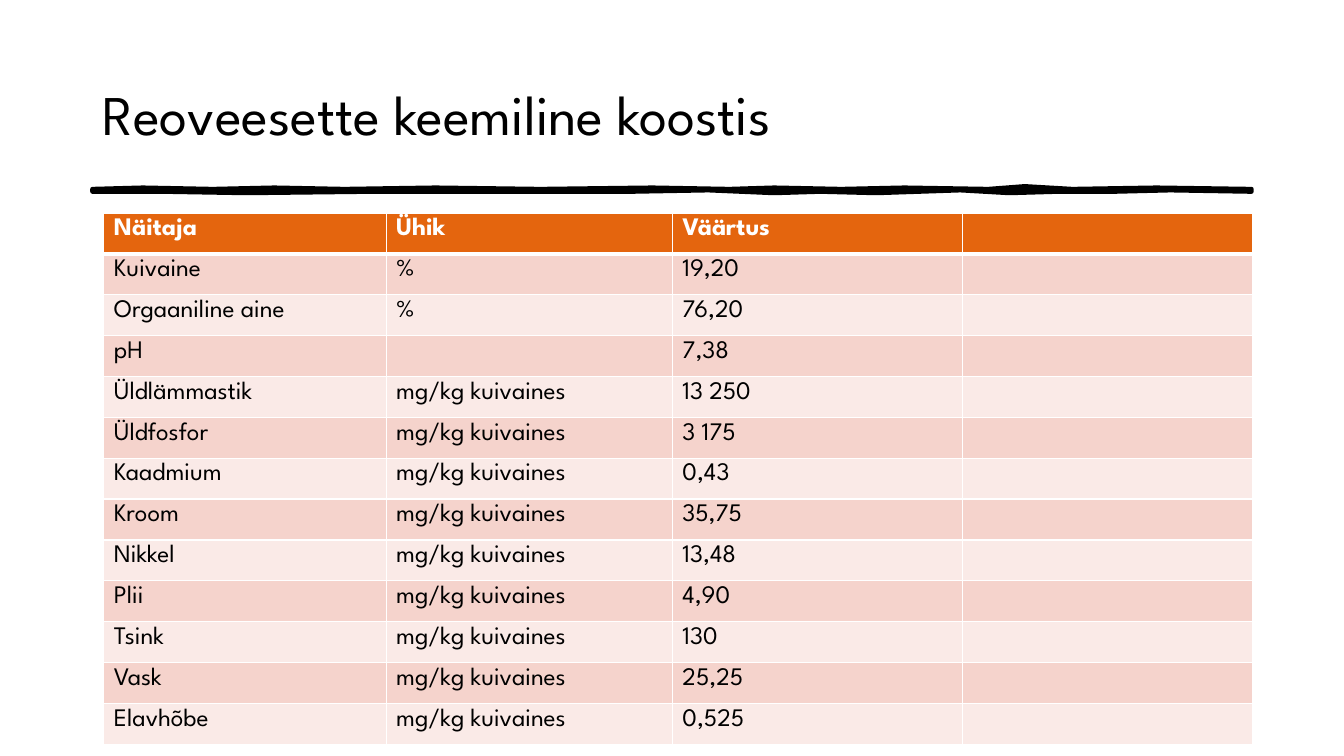
import pptx
import pptx.util
import pptx.dml.color
import pptx.enum.text
import pptx.oxml.ns
import lxml.etree

Pt = pptx.util.Pt

# Content
title = "Reoveesette keemiline koostis"
mass = "mg/kg kuivaines"
rows = [
    ("Näitaja", "Ühik", "Väärtus", ""),
    ("Kuivaine", "%", "19,20", ""),
    ("Orgaaniline aine", "%", "76,20", ""),
    ("pH", "", "7,38", ""),
    ("Üldlämmastik", mass, "13 250", ""),
    ("Üldfosfor", mass, "3 175", ""),
    ("Kaadmium", mass, "0,43", ""),
    ("Kroom", mass, "35,75", ""),
    ("Nikkel", mass, "13,48", ""),
    ("Plii", mass, "4,90", ""),
    ("Tsink", mass, "130", ""),
    ("Vask", mass, "25,25", ""),
    ("Elavhõbe", mass, "0,525", ""),
]

# Theme and measures, in points
theme = {
    "font": "League Spartan", "title": 40, "body": 18,
    "ink": "000000", "paper": "FFFFFF", "head": "E4650E",
    "bands": ("F5D3CC", "FAEAE7"), "grid": 1, "rule": 3,
}
left, wide = 66.25, 828
table_left, table_top, row_high = 74.2, 152.1, 29.2
col_wide = (201.6, 204.5, 207.4, 207.4)
# Brush stroke edges: distance from its left end, height on the slide
upper = [(0, 134.6), (36, 133.9), (86, 134.6), (130, 134), (180, 135),
         (245, 134.2), (320, 134.8), (400, 134.1), (455, 134.6),
         (487, 133.6), (535, 134.6), (580, 134), (640, 134.6),
         (666, 133.2), (700, 134.9), (760, 134.2), (828, 134.6)]
lower = [(828, 136.8), (770, 136.4), (730, 137.2), (690, 136.9),
         (655, 137.8), (620, 136.5), (560, 138), (520, 136.6),
         (487, 137.5), (440, 136.5), (385, 137.2), (330, 136.7),
         (270, 137.2), (200, 136.7), (110, 137.8), (50, 136.8), (0, 136.8)]


def color(code):
    return pptx.dml.color.RGBColor.from_string(code)


def style(para, size, code, bold=False):
    for run in para.runs:
        font = run.font
        font.name, font.size, font.bold = theme["font"], Pt(size), bold
        font.color.rgb = color(code)


def border(cell, side, width):
    props = cell._tc.get_or_add_tcPr()
    tag = pptx.oxml.ns.qn
    line = lxml.etree.SubElement(props, tag("a:ln" + side), w=str(Pt(width)))
    fill = lxml.etree.SubElement(line, tag("a:solidFill"))
    lxml.etree.SubElement(fill, tag("a:srgbClr"), val=theme["paper"])


deck = pptx.Presentation()
deck.slide_width, deck.slide_height = Pt(960), Pt(540)
slide = deck.slides.add_slide(deck.slide_layouts[6])
shapes = slide.shapes

# Brush stroke under the title
edge = [(left + x, y) for x, y in upper + lower]
pen = shapes.build_freeform(*edge[0], scale=Pt(1))
pen.add_line_segments(edge[1:], close=True)
stroke = pen.convert_to_shape()
stroke.shadow.inherit = False
stroke.fill.solid()
stroke.fill.fore_color.rgb = color(theme["ink"])
stroke.line.color.rgb = color(theme["ink"])
stroke.line.width = Pt(theme["rule"])

# Title
box = shapes.add_textbox(Pt(left), Pt(28.8), Pt(wide), Pt(104.4))
frame = box.text_frame
frame.word_wrap = True
frame.vertical_anchor = pptx.enum.text.MSO_ANCHOR.MIDDLE
frame.text = title
style(frame.paragraphs[0], theme["title"], theme["ink"])

# Table
table = shapes.add_table(len(rows), len(col_wide), Pt(table_left),
                         Pt(table_top), Pt(sum(col_wide)),
                         Pt(row_high * len(rows))).table
for col, width in zip(table.columns, col_wide):
    col.width = Pt(width)
for r, row in enumerate(rows):
    table.rows[r].height = Pt(row_high)
    head = r == 0
    back = theme["head"] if head else theme["bands"][(r - 1) % 2]
    for c, text in enumerate(row):
        cell = table.cell(r, c)
        for side in "LRTB":
            thick = (side == "B" and r == 0) or (side == "T" and r == 1)
            border(cell, side, theme["rule" if thick else "grid"])
        cell.fill.solid()
        cell.fill.fore_color.rgb = color(back)
        if text:
            cell.text_frame.text = text
            style(cell.text_frame.paragraphs[0], theme["body"],
                  theme["paper" if head else "ink"], head)

deck.save("out.pptx")
